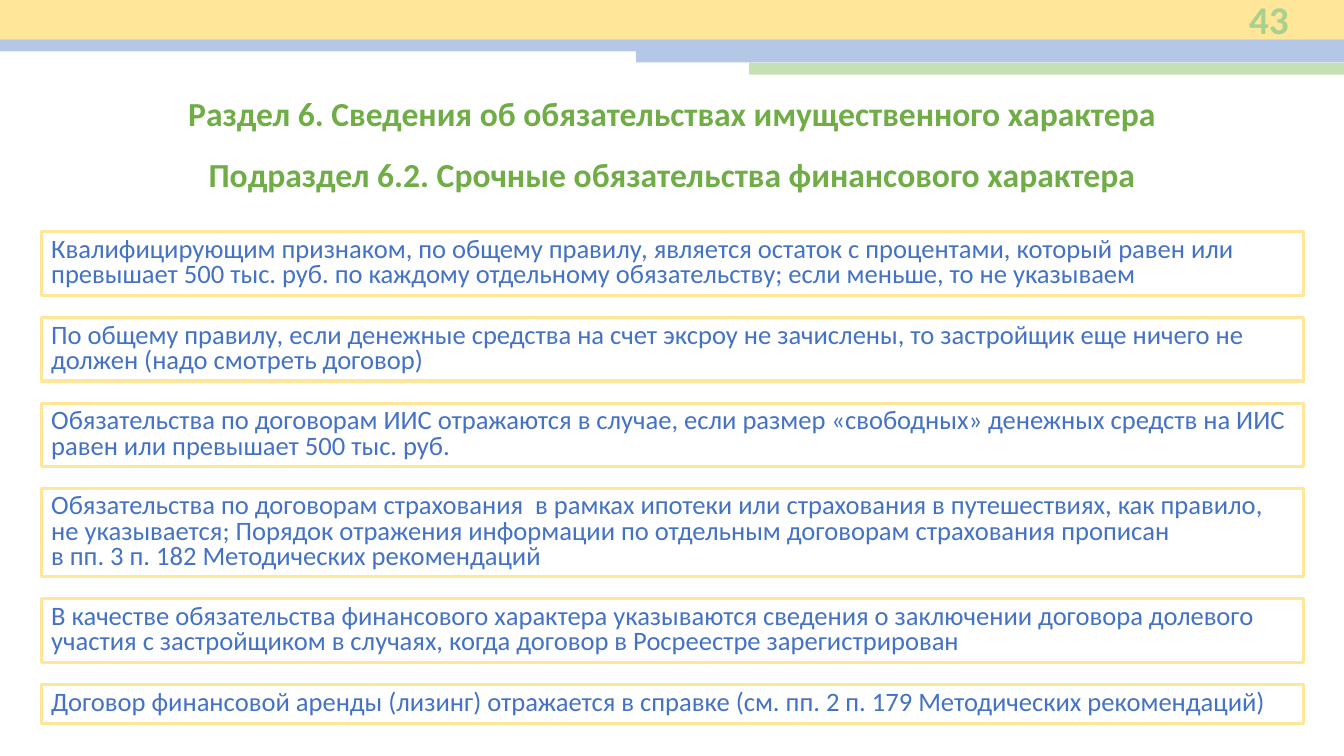
from pptx import Presentation
from pptx.dml.color import RGBColor
from pptx.enum import shapes, text
from pptx.util import Inches, Pt

FONT = "Calibri"
YELLOW, BLUE, LIGHT_GREEN = "FFE699", "B4C7E7", "C5E0B4"
NUMBER_GREEN, TITLE_GREEN, TEXT_BLUE = "A9D18E", "70AD47", "4472C4"

BANDS = [
    (0, 0, 13.33, 0.39, YELLOW),
    (0, 0.39, 13.33, 0.12, BLUE),
    (6.31, 0.5, 7.03, 0.12, BLUE),
    (7.43, 0.62, 5.91, 0.12, LIGHT_GREEN),
]

# Each rule with the number of lines it takes
RULES = [
    ("Квалифицирующим признаком, по общему правилу, является остаток с процентами, "
     "который равен или превышает 500 тыс. руб. по каждому отдельному обязательству; "
     "если меньше, то не указываем", 2),
    ("По общему правилу, если денежные средства на счет эксроу не зачислены, "
     "то застройщик еще ничего не должен (надо смотреть договор)", 2),
    ("Обязательства по договорам ИИС отражаются в случае, если размер «свободных» "
     "денежных средств на ИИС равен или превышает 500 тыс. руб.", 2),
    ("Обязательства по договорам страхования  в рамках ипотеки или страхования "
     "в путешествиях, как правило, не указывается; Порядок отражения информации "
     "по отдельным договорам страхования прописан \v"
     "в пп. 3 п. 182 Методических рекомендаций", 3),
    ("В качестве обязательства финансового характера указываются сведения о заключении "
     "договора долевого участия с застройщиком в случаях, когда договор в Росреестре "
     "зарегистрирован", 2),
    ("Договор финансовой аренды (лизинг) отражается в справке "
     "(см. пп. 2 п. 179 Методических рекомендаций)", 1),
]
RULES_TOP, RULE_GAP = 2.3, 0.22
RULE_PADDING, LINE_HEIGHT = 0.15, 0.24


def rgb(value):
    return RGBColor.from_string(value)


def write(sp, words, size, color, align, bold=False):
    tf = sp.text_frame
    tf.word_wrap = True
    p = tf.paragraphs[0]
    p.text = words
    p.alignment = align
    for r in p.runs:
        r.font.name = FONT
        r.font.size = Pt(size)
        r.font.bold = bold
        r.font.color.rgb = rgb(color)
    return p


def add_rect(s, x, y, w, h):
    sp = s.shapes.add_shape(shapes.MSO_SHAPE.RECTANGLE,
                            Inches(x), Inches(y), Inches(w), Inches(h))
    sp.shadow.inherit = False
    return sp


def add_band(s, x, y, w, h, color):
    sp = add_rect(s, x, y, w, h)
    sp.fill.solid()
    sp.fill.fore_color.rgb = rgb(color)
    sp.line.fill.background()


def add_label(s, x, y, w, h, words, size, color, align, anchor):
    sp = s.shapes.add_textbox(Inches(x), Inches(y), Inches(w), Inches(h))
    write(sp, words, size, color, align, bold=True)
    sp.text_frame.vertical_anchor = anchor


def add_rule(s, y, h, words):
    sp = add_rect(s, 0.41, y, 12.52, h)
    sp.fill.background()
    sp.line.color.rgb = rgb(YELLOW)
    sp.line.width = Pt(2.25)
    p = write(sp, words, 19, TEXT_BLUE, text.PP_ALIGN.LEFT)
    p.line_spacing = 0.8
    sp.text_frame.vertical_anchor = text.MSO_ANCHOR.MIDDLE


def main():
    prs = Presentation()
    prs.slide_width, prs.slide_height = Inches(13.33), Inches(7.5)
    s = prs.slides.add_slide(prs.slide_layouts[6])

    for band in BANDS:
        add_band(s, *band)
    add_label(s, 11.44, 0, 1.44, 0.38, "43", 28, NUMBER_GREEN,
              text.PP_ALIGN.RIGHT, text.MSO_ANCHOR.MIDDLE)

    for y, title in [
        (0.87, "Раздел 6. Сведения об обязательствах имущественного характера"),
        (1.48, "Подраздел 6.2. Срочные обязательства финансового характера"),
    ]:
        add_label(s, 0.6, y, 12.13, 0.5, title, 24, TITLE_GREEN,
                  text.PP_ALIGN.CENTER, text.MSO_ANCHOR.TOP)

    y = RULES_TOP
    for words, lines in RULES:
        h = RULE_PADDING + LINE_HEIGHT * lines
        add_rule(s, y, h, words)
        y += h + RULE_GAP

    prs.save("out.pptx")


if __name__ == "__main__":
    main()
